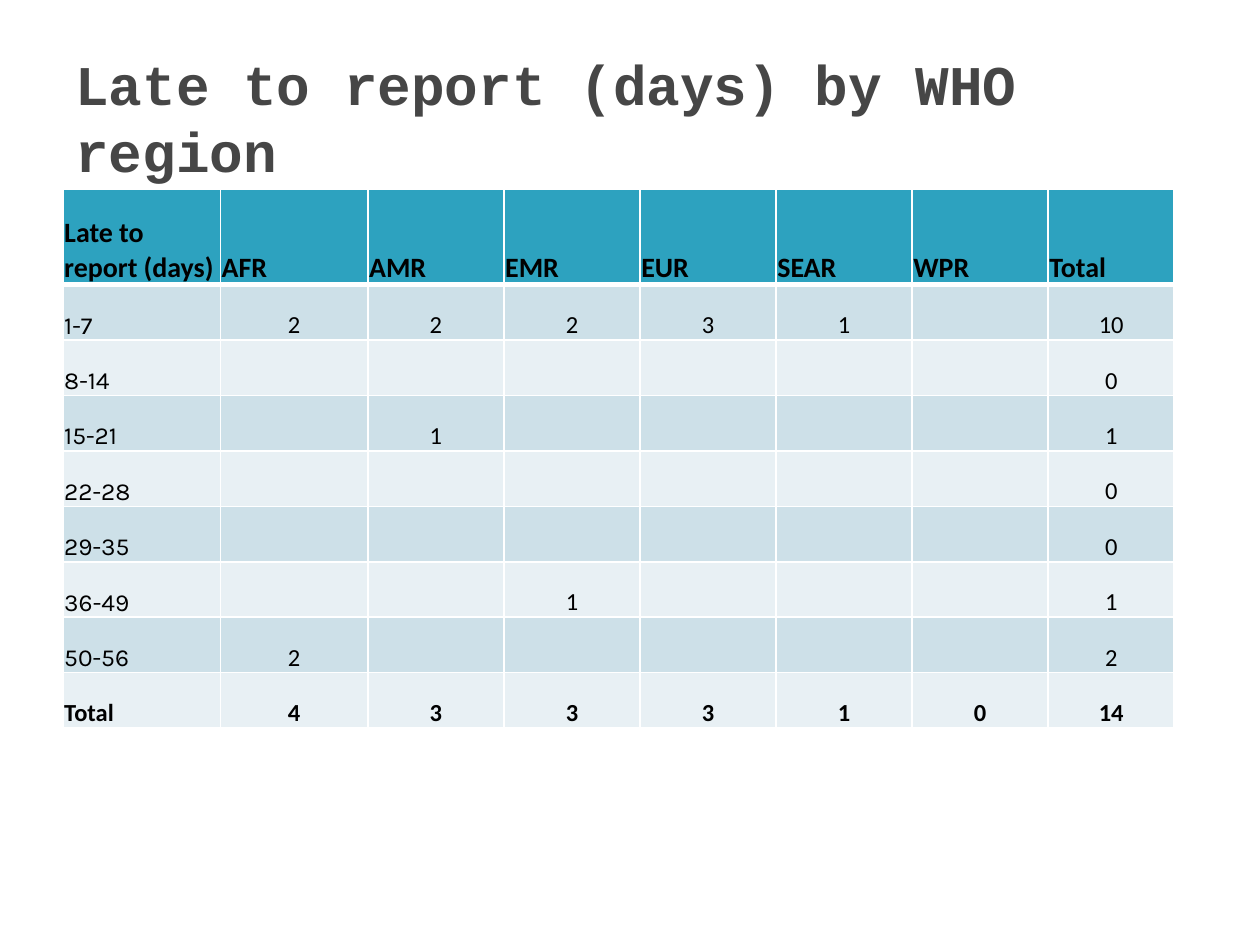
from lxml import etree
from pptx import Presentation
from pptx import util as u
from pptx.dml.color import RGBColor
from pptx.enum import text
from pptx.oxml import ns

HEADINGS = ["Late to report (days)", "AFR", "AMR", "EMR", "EUR", "SEAR", "WPR", "Total"]
DELAYS = [
    ["1-7", "2", "2", "2", "3", "1", "", "10"],
    ["8-14", "", "", "", "", "", "", "0"],
    ["15-21", "", "1", "", "", "", "", "1"],
    ["22-28", "", "", "", "", "", "", "0"],
    ["29-35", "", "", "", "", "", "", "0"],
    ["36-49", "", "", "1", "", "", "", "1"],
    ["50-56", "2", "", "", "", "", "", "2"],
    ["Total", "4", "3", "3", "3", "1", "0", "14"],
]
COLUMN_WIDTHS = [1.25, 1.17] + [1.08] * 5 + [1]
ROW_HEIGHTS = [0.76] + [0.44] * len(DELAYS)


def color(value):
    return RGBColor.from_string(value)


def write(frame, words, size=14, font="Calibri", ink="000000", bold=False,
          align=text.PP_ALIGN.LEFT):
    paragraph = frame.paragraphs[0]
    paragraph.alignment = align
    paragraph.font.size = u.Pt(size)
    if words:
        run = paragraph.add_run()
        run.text = words
        run.font.size = u.Pt(size)
        run.font.name = font
        run.font.bold = bold
        run.font.color.rgb = color(ink)


class ReportSlide:
    """Holds the style and the current slide, and adds its elements."""

    heading_fill = "2DA2BF"
    band_fills = ["E8F0F4", "CDE0E8"]
    rule = "FFFFFF"
    title_ink = "464646"

    def __init__(self, deck):
        self.slide = deck.slides.add_slide(deck.slide_layouts[6])

    def title(self, words, left, top, width, height):
        box = self.slide.shapes.add_textbox(*map(u.Inches, (left, top, width, height)))
        frame = box.text_frame
        frame.word_wrap = True
        frame.vertical_anchor = text.MSO_ANCHOR.MIDDLE
        write(frame, words, size=32, font="Courier New", ink=self.title_ink, bold=True)

    def borders(self, cell, row):
        heavy_side = {0: "B", 1: "T"}.get(row)
        for side in "LRTB":
            points = 3 if side == heavy_side else 1
            edge = etree.SubElement(cell._tc.get_or_add_tcPr(), ns.qn(f"a:ln{side}"),
                                    w=str(u.Pt(points)))
            fill = etree.SubElement(edge, ns.qn("a:solidFill"))
            etree.SubElement(fill, ns.qn("a:srgbClr"), val=self.rule)

    def cell(self, cell, words, row, column, last_row):
        cell.vertical_anchor = text.MSO_ANCHOR.BOTTOM
        cell.margin_left = cell.margin_right = cell.margin_top = u.Inches(0.01)
        cell.margin_bottom = 0
        self.borders(cell, row)
        cell.fill.solid()
        cell.fill.fore_color.rgb = color(self.band_fills[row % 2] if row else self.heading_fill)
        bold = row in (0, last_row)
        write(cell.text_frame, words, size=14 if row else 16, bold=bold,
              font="Calibri" if bold or column else "Karla",
              align=text.PP_ALIGN.CENTER if row and column else text.PP_ALIGN.LEFT)

    def table(self, rows, left, top, widths, heights):
        frame = self.slide.shapes.add_table(
            len(rows), len(widths),
            *map(u.Inches, (left, top, sum(widths), sum(heights))))
        grid = frame.table
        for column, width in zip(grid.columns, widths):
            column.width = u.Inches(width)
        for row, height in zip(grid.rows, heights):
            row.height = u.Inches(height)
        for r, entries in enumerate(rows):
            for c, words in enumerate(entries):
                self.cell(grid.cell(r, c), words, r, c, len(rows) - 1)


def main():
    deck = Presentation()
    deck.slide_width = u.Inches(10)
    deck.slide_height = u.Inches(7.5)
    report = ReportSlide(deck)
    report.title("Late to report (days) by WHO region", 0.5, 0.3, 9, 1.25)
    report.table([HEADINGS] + DELAYS, 0.5, 1.5, COLUMN_WIDTHS, ROW_HEIGHTS)
    deck.save("out.pptx")


if __name__ == "__main__":
    main()
